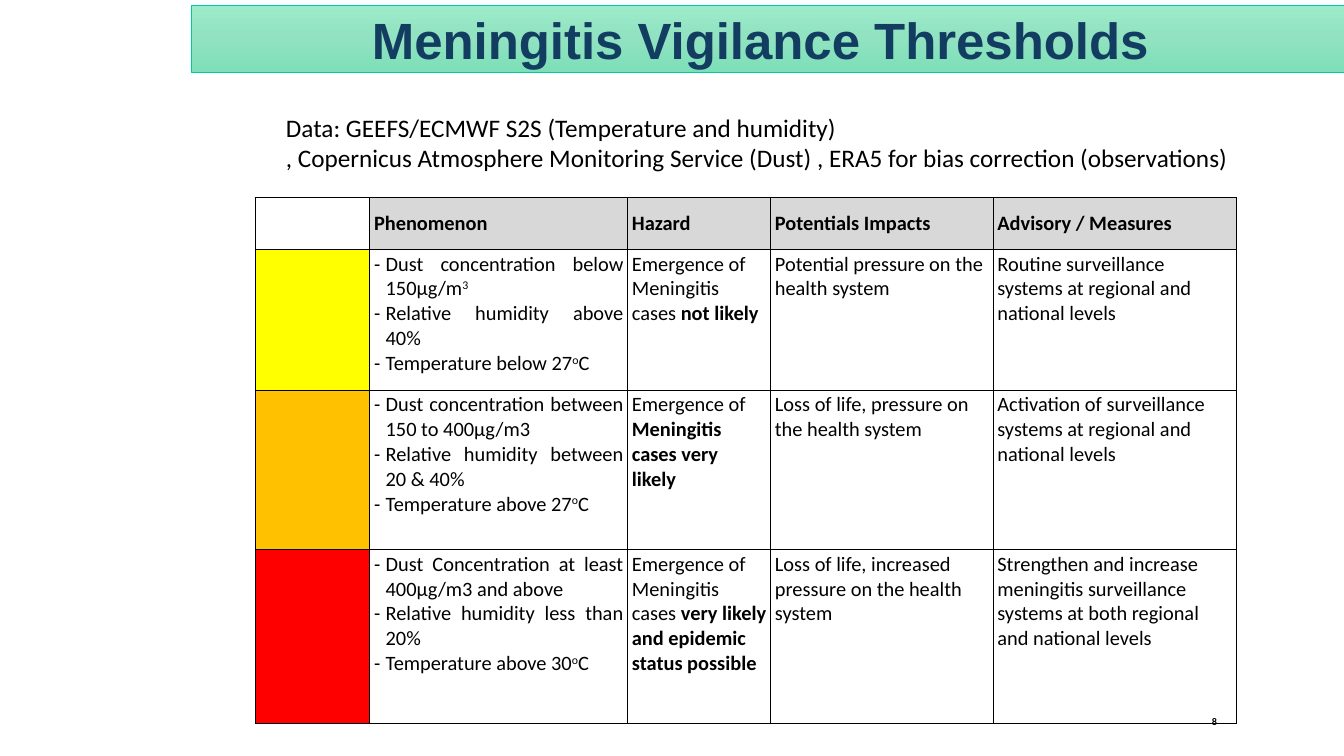
import copy
import pptx
import pptx.util
import pptx.dml.color
import pptx.enum.shapes
import pptx.enum.text
import pptx.oxml
import pptx.oxml.ns

PX = 9144  # 100 px to the inch
ALIGN = pptx.enum.text.PP_ALIGN
ANCHOR = pptx.enum.text.MSO_ANCHOR
BLACK = "000000"


def color(value):
    return pptx.dml.color.RGBColor.from_string(value)


def write(para, text, size, style="", font="Calibri", ink=BLACK):
    span = para.add_run()
    span.text = text
    span.font.size = pptx.util.Pt(size)
    span.font.name = font
    span.font.bold = style == "bold"
    span.font.color.rgb = color(ink)
    if style == "super":
        span._r.get_or_add_rPr().set("baseline", "30000")


deck = pptx.Presentation()
deck.slide_width, deck.slide_height = 2199 * PX, 1237 * PX
page = deck.slides.add_slide(deck.slide_layouts[6])

# Page number
number = page.shapes.add_textbox(1973 * PX, 1165 * PX, 201 * PX, 50 * PX)
number.text_frame.word_wrap = True
write(number.text_frame.paragraphs[0], "8", 12, "bold")

# Title banner
banner = page.shapes.add_shape(pptx.enum.shapes.MSO_SHAPE.RECTANGLE,
                               313 * PX, 8 * PX, 1886 * PX, 111 * PX)
banner.shadow.inherit = False
banner.fill.gradient()
banner.fill.gradient_angle = 270
stops = banner._element.spPr.find(".//" + pptx.oxml.ns.qn("a:gsLst"))
stops.insert(1, copy.deepcopy(stops[0]))
shades = [(0, "9DEBCA"), (0.5, "90E2C0"), (1, "7CDFB8")]
for stop, (position, shade) in zip(banner.fill.gradient_stops, shades):
    stop.position = position
    stop.color.rgb = color(shade)
banner.line.color.rgb = color("00CC99")
banner.line.width = pptx.util.Pt(0.5)
banner.text_frame.word_wrap = True
banner.text_frame.vertical_anchor = ANCHOR.MIDDLE
title = banner.text_frame.paragraphs[0]
title.alignment = ALIGN.CENTER
write(title, "Meningitis Vigilance Thresholds ", 60, "bold", "Arial", "123D61")

# Threshold table: each row is a fill for the first cell, then the texts
headings = ["Phenomenon", "Hazard", "Potentials Impacts", "Advisory / Measures"]
levels = [
    ("FFFF00",
     [[("Dust concentration below 150μg/m", ""), ("3", "super")],
      [("Relative humidity above 40%", "")],
      [("Temperature below 27", ""), ("o", "super"), ("C", "")]],
     [("Emergence of Meningitis cases ", ""), ("not likely", "bold")],
     "Potential pressure on the health system",
     "Routine surveillance systems at regional and national levels"),
    ("FFC100",
     [[("Dust concentration between 150 to 400μg/m3", "")],
      [("Relative humidity between 20 & 40%", "")],
      [("Temperature above 27", ""), ("o", "super"), ("C ", "")]],
     [("Emergence of ", ""), ("Meningitis cases very likely", "bold")],
     "Loss of life, pressure on the health system",
     "Activation of surveillance systems at regional and national levels"),
    ("FF0000",
     [[("Dust Concentration at least 400μg/m3 and above", "")],
      [("Relative humidity less than 20%", "")],
      [("Temperature above 30", ""), ("o", "super"), ("C ", "")]],
     [("Emergence of Meningitis cases ", ""),
      ("very likely and epidemic status possible", "bold")],
     "Loss of life, increased pressure on the health system",
     "Strengthen and increase meningitis surveillance systems at both "
     "regional and national levels"),
]
rows = [(None, [[]], *[[[(heading, "bold")]] for heading in headings])]
for fill, phenomena, hazard, impact, advice in levels:
    rows.append((fill, [[]], phenomena, [hazard], [[(impact, "")]], [[(advice, "")]]))

widths = [188, 422, 234, 364, 398]
heights = [85, 230, 261, 284]
table = page.shapes.add_table(len(heights), len(widths), 417 * PX, 323 * PX,
                              sum(widths) * PX, sum(heights) * PX).table
table.first_row = table.horz_banding = False
for column, width in zip(table.columns, widths):
    column.width = width * PX
for row, height in zip(table.rows, heights):
    row.height = height * PX

for i, (level_fill, *texts) in enumerate(rows):
    for j, paragraphs in enumerate(texts):
        cell = table.cell(i, j)
        cell.margin_left = cell.margin_right = 7 * PX
        cell.margin_top = cell.margin_bottom = 4 * PX
        cell.vertical_anchor = ANCHOR.MIDDLE if i == 0 else ANCHOR.TOP

        # Borders go before the fill
        for side in ("lnL", "lnR", "lnT", "lnB"):
            cell._tc.get_or_add_tcPr().append(pptx.oxml.parse_xml(
                f'<a:{side} {pptx.oxml.ns.nsdecls("a")} w="12700"><a:solidFill>'
                f'<a:srgbClr val="{BLACK}"/></a:solidFill></a:{side}>'))
        fill = level_fill if j == 0 else "D8D8D8" if i == 0 else None
        if fill:
            cell.fill.solid()
            cell.fill.fore_color.rgb = color(fill)
        else:
            cell.fill.background()

        for k, runs in enumerate(paragraphs):
            frame = cell.text_frame
            para = frame.paragraphs[0] if k == 0 else frame.add_paragraph()
            if i > 0 and j == 1:  # dashed list of phenomena
                para.alignment = ALIGN.JUSTIFY
                settings = para._p.get_or_add_pPr()
                settings.set("marL", str(19 * PX))
                settings.set("indent", str(-19 * PX))
                for bullet in (f'<a:buClr {{}}><a:srgbClr val="{BLACK}"/></a:buClr>',
                               '<a:buFont {} typeface="Calibri"/>',
                               '<a:buChar {} char="-"/>'):
                    settings.append(pptx.oxml.parse_xml(
                        bullet.format(pptx.oxml.ns.nsdecls("a"))))
            for text, style in runs:
                write(para, text, 24, style)

# Data sources
sources = page.shapes.add_textbox(458 * PX, 179 * PX, 1740 * PX, 110 * PX)
sources.text_frame.word_wrap = True
write(sources.text_frame.paragraphs[0],
      "Data: GEEFS/ECMWF S2S (Temperature and humidity)", 29.7)
write(sources.text_frame.add_paragraph(),
      ", Copernicus Atmosphere Monitoring Service (Dust) , "
      "ERA5 for bias correction (observations)", 29.7)

deck.save("out.pptx")
